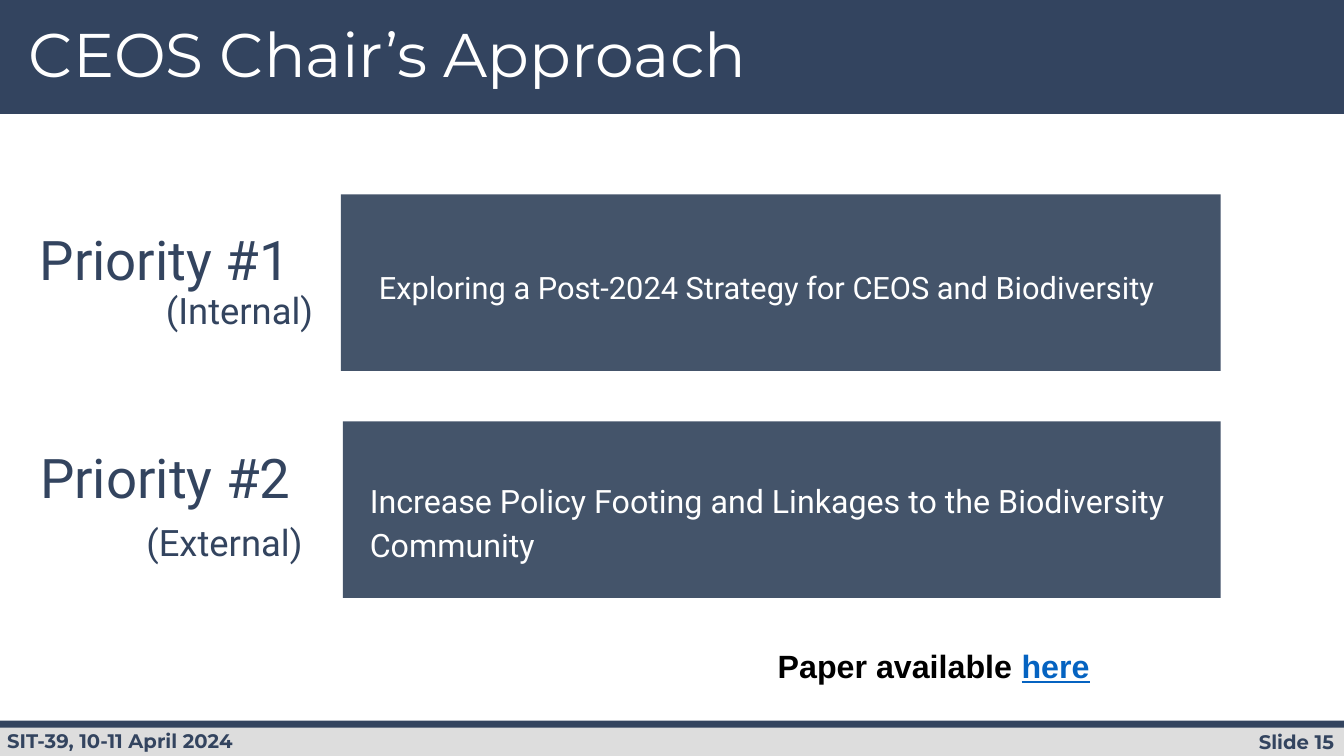
from dataclasses import dataclass

from pptx import Presentation
from pptx.dml.color import RGBColor
from pptx.enum.shapes import MSO_SHAPE
from pptx.enum.text import MSO_ANCHOR, PP_ALIGN
from pptx.shapes.autoshape import Shape
from pptx.util import Cm, Pt

RECTANGLE = MSO_SHAPE.RECTANGLE
TOP, MIDDLE = MSO_ANCHOR.TOP, MSO_ANCHOR.MIDDLE
LEFT, RIGHT = PP_ALIGN.LEFT, PP_ALIGN.RIGHT

NAVY = RGBColor(0x33, 0x44, 0x5F)
SLATE = RGBColor(0x44, 0x54, 0x6A)
GREY = RGBColor(0xDD, 0xDD, 0xDD)
WHITE = RGBColor(0xFF, 0xFF, 0xFF)
BLACK = RGBColor(0x00, 0x00, 0x00)
LINK_BLUE = RGBColor(0x05, 0x63, 0xC1)

SLIDE_WIDTH, SLIDE_HEIGHT = 33.87, 19.05


@dataclass(frozen=True)
class Area:
    """A rectangle on the slide, in centimetres."""
    left: float
    top: float
    width: float
    height: float

    def lengths(self) -> tuple[Cm, Cm, Cm, Cm]:
        return Cm(self.left), Cm(self.top), Cm(self.width), Cm(self.height)


@dataclass(frozen=True)
class Line:
    """One paragraph made of a single style."""
    text: str
    size: float
    font: str
    color: RGBColor
    bold: bool = False
    align: PP_ALIGN = LEFT
    spacing: float = 1.0
    before: float = 0


@dataclass(frozen=True)
class Priority:
    name: str
    scope: str
    scope_gap: float
    label_area: Area
    panel_area: Area
    statement: str
    statement_size: float
    statement_area: Area


BARS = [
    (Area(0, 0, SLIDE_WIDTH, 2.87), NAVY),
    (Area(0, 18.26, SLIDE_WIDTH, 0.79), GREY),
    (Area(0, 18.16, SLIDE_WIDTH, 0.18), NAVY),
]

PRIORITIES = [
    Priority("Priority #1", "(Internal)", 0, Area(0.67, 5.21, 7.56, 3.84),
             Area(8.59, 4.9, 22.17, 4.45),
             "Exploring a Post-2024 Strategy for CEOS and Biodiversity", 22,
             Area(9.22, 5.41, 21.03, 3.51)),
    Priority("Priority #2", "(External)", 10.5, Area(0.68, 10.87, 7.28, 3.84),
             Area(8.64, 10.62, 22.12, 4.45),
             "Increase Policy Footing and Linkages to the Biodiversity Community", 23,
             Area(8.99, 11.89, 21.77, 2.41)),
]


def add_block(shapes, area: Area, color: RGBColor) -> Shape:
    block = shapes.add_shape(RECTANGLE, *area.lengths())
    block.shadow.inherit = False
    block.fill.solid()
    block.fill.fore_color.rgb = color
    block.line.fill.background()
    return block


def add_text(shapes, area: Area, lines: list[Line], side: float = 0.25,
             edge: float = 0.13, anchor: MSO_ANCHOR = TOP) -> Shape:
    box = shapes.add_textbox(*area.lengths())
    frame = box.text_frame
    frame.word_wrap = True
    frame.vertical_anchor = anchor
    frame.margin_left = frame.margin_right = Cm(side)
    frame.margin_top = frame.margin_bottom = Cm(edge)
    frame.text = "\n".join(line.text for line in lines)
    for para, line in zip(frame.paragraphs, lines):
        para.alignment = line.align
        para.line_spacing = line.spacing
        if line.before:
            para.space_before = Pt(line.before)
        for span in para.runs:
            span.font.name = line.font
            span.font.size = Pt(line.size)
            span.font.bold = line.bold
            span.font.color.rgb = line.color
    return box


def add_priority(page, item: Priority) -> None:
    shapes = page.shapes.add_group_shape().shapes
    label = [
        Line(item.name, 39, "Roboto", NAVY, spacing=0.9),
        Line(item.scope, 26, "Roboto", NAVY, align=RIGHT, spacing=0.9,
             before=item.scope_gap),
    ]
    statement = Line(item.statement, item.statement_size, "Roboto", WHITE, spacing=1.15)
    add_text(shapes, item.label_area, label, 0.33, 0.18, MIDDLE)
    add_block(shapes, item.panel_area, SLATE)
    add_text(shapes, item.statement_area, [statement], 0.33, 0.18, MIDDLE)


def main() -> None:
    deck = Presentation()
    deck.slide_width, deck.slide_height = Cm(SLIDE_WIDTH), Cm(SLIDE_HEIGHT)
    page = deck.slides.add_slide(deck.slide_layouts[6])

    # Header and footer bars
    for area, color in BARS:
        add_block(page.shapes, area, color)

    # Footer texts
    add_text(page.shapes, Area(28.52, 18.26, 5.35, 0.79),
             [Line("Slide 15", 14, "Montserrat", NAVY, True, RIGHT)])
    add_text(page.shapes, Area(0, 18.24, 13.6, 0.79),
             [Line("SIT-39, 10-11 April 2024", 14, "Montserrat", NAVY, True)], side=0.18)

    # Title
    add_text(page.shapes, Area(0.48, 0.48, 28.78, 2.16),
             [Line("CEOS Chair’s Approach", 44, "Montserrat", WHITE, spacing=0.9)])

    # Priorities
    for item in PRIORITIES:
        add_priority(page, item)

    # Paper reference
    paper = add_text(page.shapes, Area(19.35, 16.03, 14, 1.12),
                     [Line("Paper available ", 23, "Arial", BLACK, True)], edge=0.25)
    span = paper.text_frame.paragraphs[0].add_run()
    span.text = "here"
    span.font.name = "Arial"
    span.font.size = Pt(23)
    span.font.bold = span.font.underline = True
    span.font.color.rgb = LINK_BLUE

    deck.save("out.pptx")


if __name__ == "__main__":
    main()
